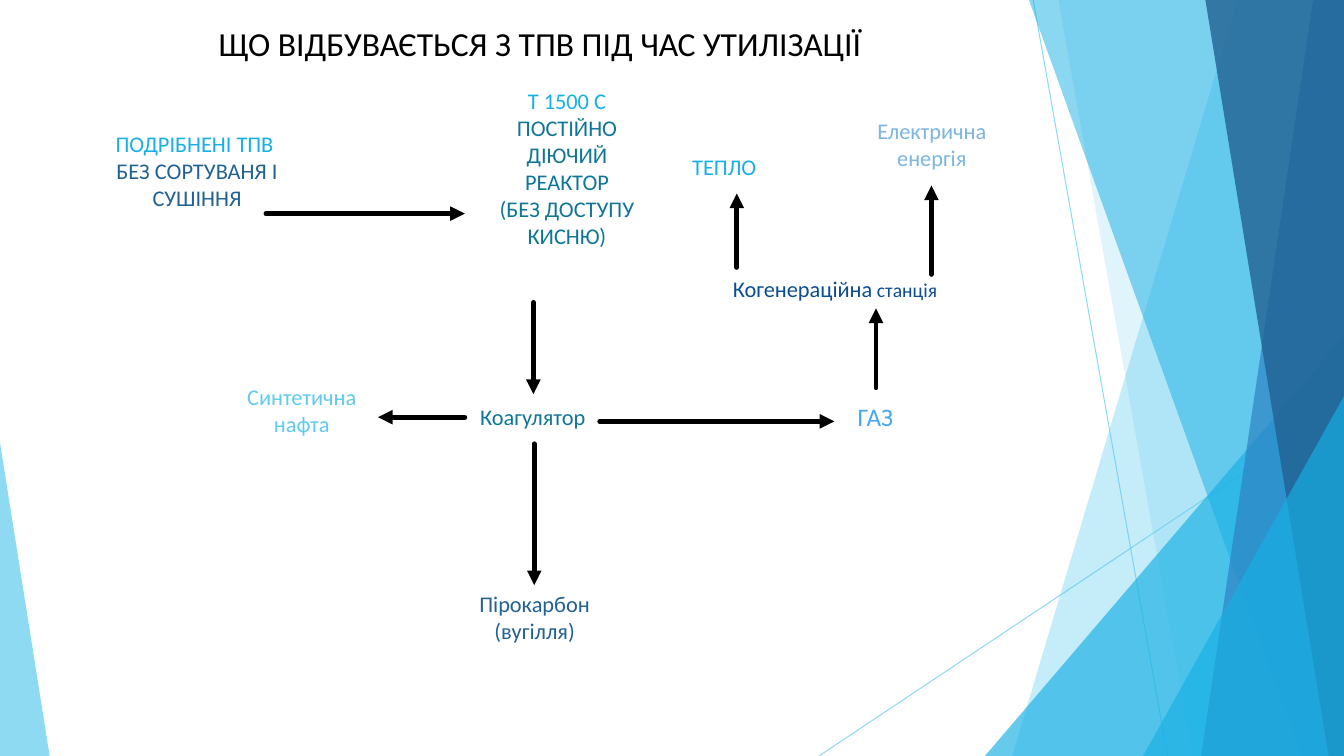
from lxml import etree
from pptx import Presentation
from pptx.dml.color import RGBColor
from pptx.enum.shapes import MSO_CONNECTOR, MSO_SHAPE
from pptx.enum.text import MSO_ANCHOR, MSO_AUTO_SIZE, PP_ALIGN
from pptx.oxml.ns import qn
from pptx.util import Pt

STRAIGHT = MSO_CONNECTOR.STRAIGHT
PEAK = MSO_SHAPE.ISOSCELES_TRIANGLE
TOP = MSO_ANCHOR.TOP
GROW = MSO_AUTO_SIZE.SHAPE_TO_FIT_TEXT
LEFT, CENTER = PP_ALIGN.LEFT, PP_ALIGN.CENTER

THEME = {
    "font": "Calibri",
    "ink": {
        "black": "000000", "sky": "5FCBEF", "cyan": "17B0E4",
        "blue": "2E83C3", "navy": "226292", "teal": "0F7698",
        "azure": "45A7F1", "deep": "0B4E91", "pale": "7CB5E0",
    },
    "size": {"title": 24, "gas": 18, "text": 16, "small": 14},
}
WIDE, HIGH = 960, 540
FRAME = {"word_wrap": True, "auto_size": GROW, "vertical_anchor": TOP}


def tint(paint, ink, alpha=100):
    paint.solid()
    paint.fore_color.rgb = RGBColor.from_string(THEME["ink"][ink])
    if alpha < 100:
        color = paint._xPr.find(qn("a:solidFill"))[0]
        etree.SubElement(color, qn("a:alpha"), val=str(alpha * 1000))


def write(box, runs, align=CENTER):
    for key, val in FRAME.items():
        setattr(box.text_frame, key, val)
    para = box.text_frame.paragraphs[0]
    para.alignment = align
    for text, ink, size in runs:
        points = THEME["size"][size]
        style = {"name": THEME["font"], "size": Pt(points), "bold": False}
        for row, words in enumerate(text.split("\n")):
            if row:
                para.add_line_break()
                etree.SubElement(para._p[-1], qn("a:rPr"), sz=str(points * 100))
            if words:
                run = para.add_run()
                run.text = words
                for key, val in style.items():
                    setattr(run.font, key, val)
                tint(run.font.fill, ink)


deck = Presentation()
deck.slide_width, deck.slide_height = Pt(WIDE), Pt(HIGH)
slide = deck.slides.add_slide(deck.slide_layouts[5])
shapes = slide.shapes

RAYS = [(738, 0, 834, 540), (960, 290, 585, 540)]
ARROWS = [
    (190, 152.6, 332, 152.6), (381, 216, 381, 281.5),
    (332, 298, 270, 298), (381.6, 317, 381.6, 418),
    (428.4, 301, 596, 301), (625.7, 277, 625.7, 220.3),
    (526.3, 191, 526.3, 138.2), (665.3, 196, 665.3, 132.5),
]
BANDS = [
    (884, 723, "sky", 36), (756, 852, "sky", 20),
    (703.5, 240, 256.5, 300, 1, "cyan", 66),
    (735, 929.5, "cyan", 50), (938, 858, "blue", 70),
    (861, 949, "navy", 80),
    (816.5, 283, 143.5, 257, 1, "cyan", 66),
    (0, 316, 35.5, 224, 0, "sky", 70),
]
LABELS = [
    (64.8, 89.3, 152, 65.5, [("ПОДРІБНЕНІ ТПВ \n", "cyan", "text"),
                             ("БЕЗ СОРТУВАНЯ І\nСУШІННЯ", "navy", "text")]),
    (284.4, 59, 241.2, 124, [
        ("T 1500 C\n", "cyan", "text"),
        ("ПОСТІЙНО\nДІЮЧИЙ\nРЕАКТОР\n(БЕЗ ДОСТУПУ\nКИСНЮ)", "teal", "text")]),
    (322.6, 284.4, 116, 26.6, [("Коагулятор", "teal", "text")]),
    (522, 283, 206.6, 29, [("ГАЗ", "azure", "gas")]),
    (493.2, 193, 206.6, 26.6, [("Когенераційна", "deep", "text"),
                               (" станція", "deep", "small")]),
    (481.7, 106, 71.3, 26.6, [("ТЕПЛО", "cyan", "text")]),
    (602.6, 80, 126, 46, [("Електрична\nенергія", "pale", "text")]),
    (112.3, 270, 206.6, 46, [("Синтетична\nнафта", "sky", "text")]),
    (280, 418.3, 203.8, 46, [("Пірокарбон\n(вугілля)", "navy", "text")]),
]

for ends in RAYS + ARROWS:
    line = shapes.add_connector(STRAIGHT, *map(Pt, ends))
    etree.SubElement(line._element.spPr, qn("a:effectLst"))
    ray = ends in RAYS
    line.line.width = Pt(0.75 if ray else 3.5)
    tint(line.line.fill, "sky" if ray else "black", 70 if ray else 100)
    if not ray:
        stroke = line.line._get_or_add_ln()
        stroke.set("cap", "rnd")
        etree.SubElement(stroke, qn("a:round"))
        etree.SubElement(stroke, qn("a:tailEnd"), type="triangle")

for *form, ink, alpha in BANDS:
    if len(form) == 2:
        top, foot = form
        pen = shapes.build_freeform(Pt(top), Pt(0))
        spots = [(WIDE, 0), (WIDE, HIGH), (foot, HIGH)]
        pen.add_line_segments([(Pt(x), Pt(y)) for x, y in spots])
        band = pen.convert_to_shape()
    else:
        band = shapes.add_shape(PEAK, *map(Pt, form[:4]))
        band.adjustments[0] = form[4]
    band.shadow.inherit = False
    band.line.fill.background()
    tint(band.fill, ink, alpha)

title = shapes.title
for key, val in zip(("left", "top", "width", "height"), (149, 13, 570.2, 36)):
    setattr(title, key, Pt(val))
write(title, [("ЩО ВІДБУВАЄТЬСЯ З ТПВ ПІД ЧАС УТИЛІЗАЦІЇ", "black", "title")], LEFT)

for *place, runs in LABELS:
    write(shapes.add_textbox(*map(Pt, place)), runs)

deck.save("out.pptx")
